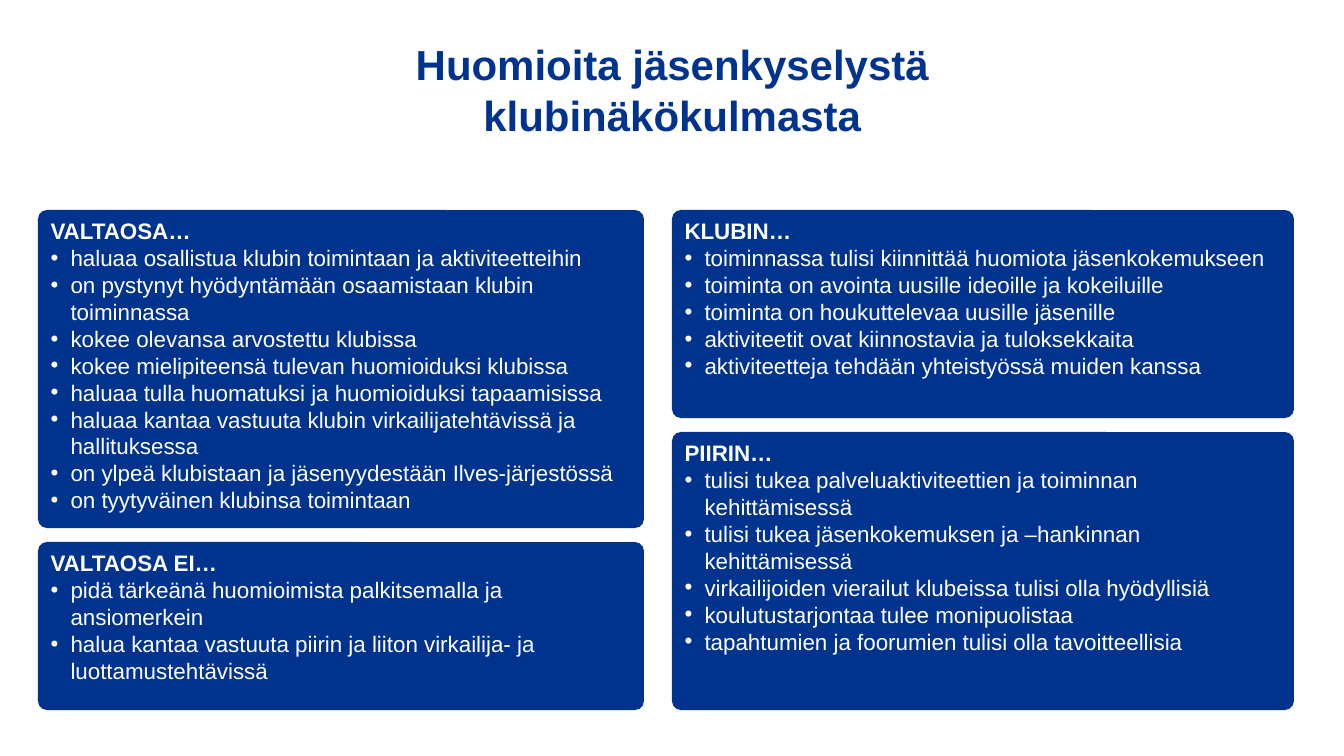
from lxml import etree
from pptx import Presentation
from pptx.dml.color import RGBColor
from pptx.enum.shapes import MSO_SHAPE as Shape
from pptx.enum.text import MSO_ANCHOR as Anchor, PP_ALIGN as Align
from pptx.oxml.ns import qn
from pptx.util import Pt

SCALE = 914400 / 100.8  # EMU per px
BLUE, WHITE = "00338D", "FFFFFF"
TOP, BOTTOM, GAP, RADIUS, INDENT = 210, 710, 14, 9, 20


def px(length):
    return round(length * SCALE)


def style(para, size, color, bold):
    para.font.name = "Arial"
    para.font.size = Pt(size)
    para.font.bold = bold
    para.font.color.rgb = RGBColor.from_string(color)


deck = Presentation()
deck.slide_width, deck.slide_height = px(1344), px(756)
page = deck.slides.add_slide(deck.slide_layouts[6])

# Title
title = page.shapes.add_textbox(px(256), px(34), px(833), px(112))
title.text_frame.word_wrap = True
para = title.text_frame.paragraphs[0]
para.text = "Huomioita jäsenkyselystä klubinäkökulmasta"
para.alignment = Align.CENTER
style(para, 30, BLUE, True)

# Columns: left, width, and the cards as height of the upper one, heading, points
columns = [
    (38, 606, 318, [
        ("VALTAOSA…", [
            "haluaa osallistua klubin toimintaan ja aktiviteetteihin",
            "on pystynyt hyödyntämään osaamistaan klubin toiminnassa",
            "kokee olevansa arvostettu klubissa",
            "kokee mielipiteensä tulevan huomioiduksi klubissa",
            "haluaa tulla huomatuksi ja huomioiduksi tapaamisissa",
            "haluaa kantaa vastuuta klubin virkailijatehtävissä ja hallituksessa",
            "on ylpeä klubistaan ja jäsenyydestään Ilves-järjestössä",
            "on tyytyväinen klubinsa toimintaan",
        ]),
        ("VALTAOSA EI…", [
            "pidä tärkeänä huomioimista palkitsemalla ja ansiomerkein",
            "halua kantaa vastuuta piirin ja liiton virkailija- ja luottamustehtävissä",
        ]),
    ]),
    (672, 622, 208, [
        ("KLUBIN…", [
            "toiminnassa tulisi kiinnittää huomiota jäsenkokemukseen",
            "toiminta on avointa uusille ideoille ja kokeiluille",
            "toiminta on houkuttelevaa uusille jäsenille",
            "aktiviteetit ovat kiinnostavia ja tuloksekkaita",
            "aktiviteetteja tehdään yhteistyössä muiden kanssa",
        ]),
        ("PIIRIN…", [
            "tulisi tukea palveluaktiviteettien ja toiminnan kehittämisessä",
            "tulisi tukea jäsenkokemuksen ja –hankinnan kehittämisessä",
            "virkailijoiden vierailut klubeissa tulisi olla hyödyllisiä",
            "koulutustarjontaa tulee monipuolistaa",
            "tapahtumien ja foorumien tulisi olla tavoitteellisia",
        ]),
    ]),
]

for left, width, upper_height, cards in columns:
    lower_top = TOP + upper_height + GAP
    spans = [(TOP, upper_height), (lower_top, BOTTOM - lower_top)]
    for (top, height), (heading, points) in zip(spans, cards):
        # Card
        card = page.shapes.add_shape(
            Shape.ROUNDED_RECTANGLE, px(left), px(top), px(width), px(height))
        card.adjustments[0] = RADIUS / height
        card.shadow.inherit = False
        card.fill.solid()
        card.fill.fore_color.rgb = RGBColor.from_string(BLUE)
        card.line.fill.background()
        frame = card.text_frame
        frame.word_wrap = True
        frame.vertical_anchor = Anchor.TOP

        # Heading
        para = frame.paragraphs[0]
        para.text = heading
        para.alignment = Align.LEFT
        style(para, 16, WHITE, True)

        # Bullet points
        for point in points:
            para = frame.add_paragraph()
            para.text = point
            para.alignment = Align.LEFT
            layout = para._p.get_or_add_pPr()
            layout.set("marL", str(px(INDENT)))
            layout.set("indent", str(-px(INDENT)))
            etree.SubElement(layout, qn("a:buFont")).set("typeface", "Arial")
            etree.SubElement(layout, qn("a:buChar")).set("char", "•")
            style(para, 16, WHITE, False)

deck.save("out.pptx")
